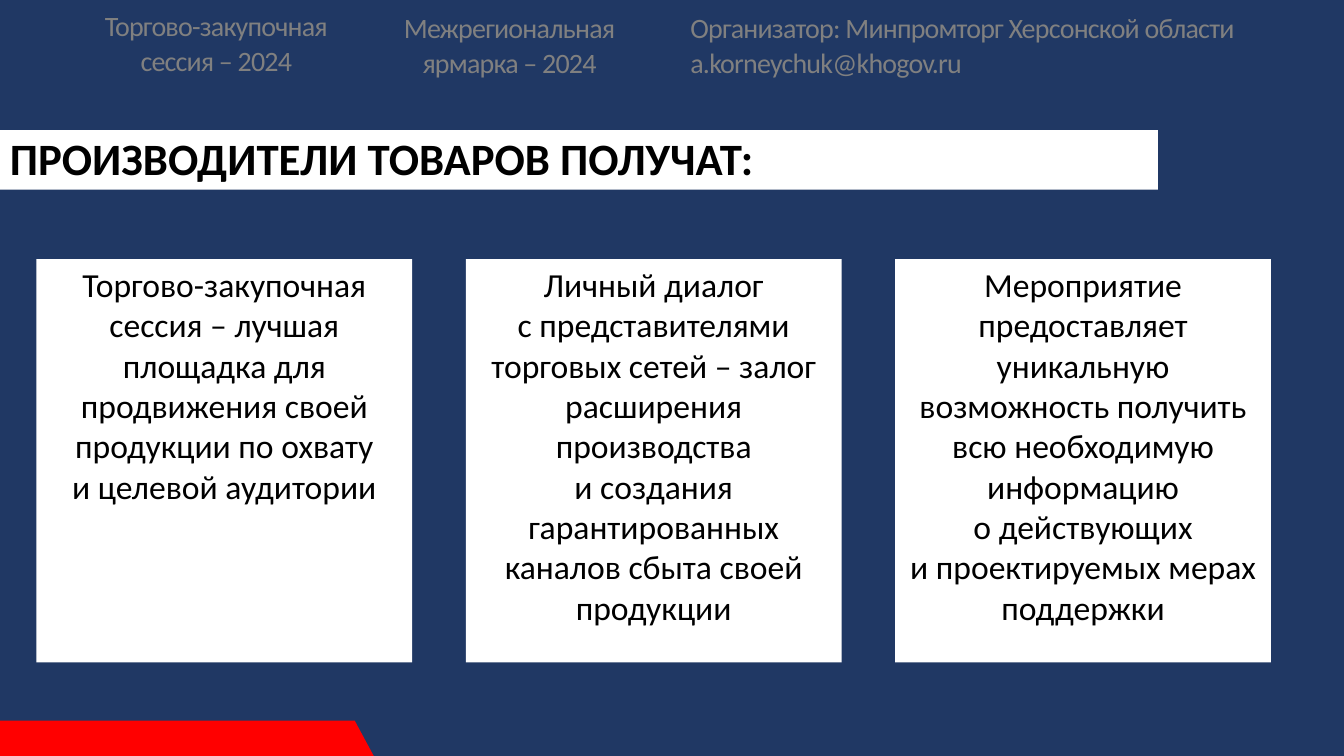
import pptx
import pptx.util
import pptx.dml.color
import pptx.enum.shapes
import pptx.enum.text

Cm, Pt = pptx.util.Cm, pptx.util.Pt
RGB = pptx.dml.color.RGBColor
ALIGN = pptx.enum.text.PP_ALIGN
ANCHOR = pptx.enum.text.MSO_ANCHOR
RECT = pptx.enum.shapes.MSO_SHAPE.RECTANGLE

# Content
COLORS = {"navy": "203864", "white": "FFFFFF", "black": "000000",
          "gray": "808080", "red": "FF0000"}
FONT = "Calibri"
TITLE = "ПРОИЗВОДИТЕЛИ ТОВАРОВ ПОЛУЧАТ:"
CARDS = [
    ["Торгово-закупочная сессия – лучшая площадка для продвижения своей "
     "продукции по охвату",
     "и целевой аудитории"],
    ["Личный диалог",
     "с представителями торговых сетей – залог расширения производства",
     "и создания гарантированных каналов сбыта своей продукции"],
    ["Мероприятие предоставляет уникальную возможность получить всю "
     "необходимую информацию",
     "о действующих",
     "и проектируемых мерах поддержки"],
]
# Header notes: left, top, width in cm, alignment, lines
HEADERS = [
    (2.34, 0.1, 6.22, ALIGN.CENTER, ["Торгово-закупочная", "сессия – 2024"]),
    (9.73, 0.15, 6.22, ALIGN.CENTER, ["Межрегиональная", "ярмарка – 2024"]),
    (17.15, 0.15, 14.4, ALIGN.LEFT,
     ["Организатор: Минпромторг Херсонской области", "a.korneychuk@khogov.ru"]),
]
HEADER_H = 2.01
CARD_LEFT, CARD_TOP, CARD_W, CARD_H, CARD_STEP = 0.92, 6.53, 9.47, 10.16, 10.82
RIBBON = [(0, 18.16), (8.94, 18.16), (9.42, 19.05), (0, 19.05)]


def paint(sp, color):
    sp.fill.solid()
    sp.fill.fore_color.rgb = RGB.from_string(COLORS[color])
    sp.line.fill.background()
    sp.shadow.inherit = False


def write(sp, lines, size, color, align, anchor=ANCHOR.TOP, bold=False,
          spacing=None, before=0, tracking=0):
    tf = sp.text_frame
    tf.word_wrap = True
    tf.vertical_anchor = anchor
    for i, line in enumerate(lines):
        p = tf.paragraphs[0] if i == 0 else tf.add_paragraph()
        p.alignment = align
        if spacing:
            p.line_spacing = spacing
        if i and before:
            p.space_before = Pt(before)
        r = p.add_run()
        r.text = line
        r.font.name, r.font.size, r.font.bold = FONT, Pt(size), bold
        r.font.color.rgb = RGB.from_string(COLORS[color])
        if tracking:
            r.font._element.set("spc", str(round(tracking * 100)))


def add_panel(slide, left, top, width, height):
    sp = slide.shapes.add_shape(RECT, Cm(left), Cm(top), Cm(width), Cm(height))
    paint(sp, "white")
    return sp


def main():
    prs = pptx.Presentation()
    prs.slide_width, prs.slide_height = Cm(33.87), Cm(19.05)
    s = prs.slides.add_slide(prs.slide_layouts[6])
    s.background.fill.solid()
    s.background.fill.fore_color.rgb = RGB.from_string(COLORS["navy"])

    # Title band
    band = add_panel(s, 0, 3.28, 29.18, 1.5)
    write(band, [TITLE], 32, "black", ALIGN.LEFT, ANCHOR.BOTTOM, True, 0.9)

    # Benefit cards
    for i, lines in enumerate(CARDS):
        card = add_panel(s, CARD_LEFT + i * CARD_STEP, CARD_TOP, CARD_W, CARD_H)
        write(card, lines, 24, "black", ALIGN.CENTER)

    # Header notes
    for left, top, width, align, lines in HEADERS:
        note = s.shapes.add_textbox(Cm(left), Cm(top), Cm(width), Cm(HEADER_H))
        write(note, lines, 20, "gray", align, before=1, tracking=-0.6)

    # Red corner ribbon
    points = [(Cm(x), Cm(y)) for x, y in RIBBON]
    fb = s.shapes.build_freeform(*points[0])
    fb.add_line_segments(points[1:], close=True)
    paint(fb.convert_to_shape(), "red")

    prs.save("out.pptx")


if __name__ == "__main__":
    main()
